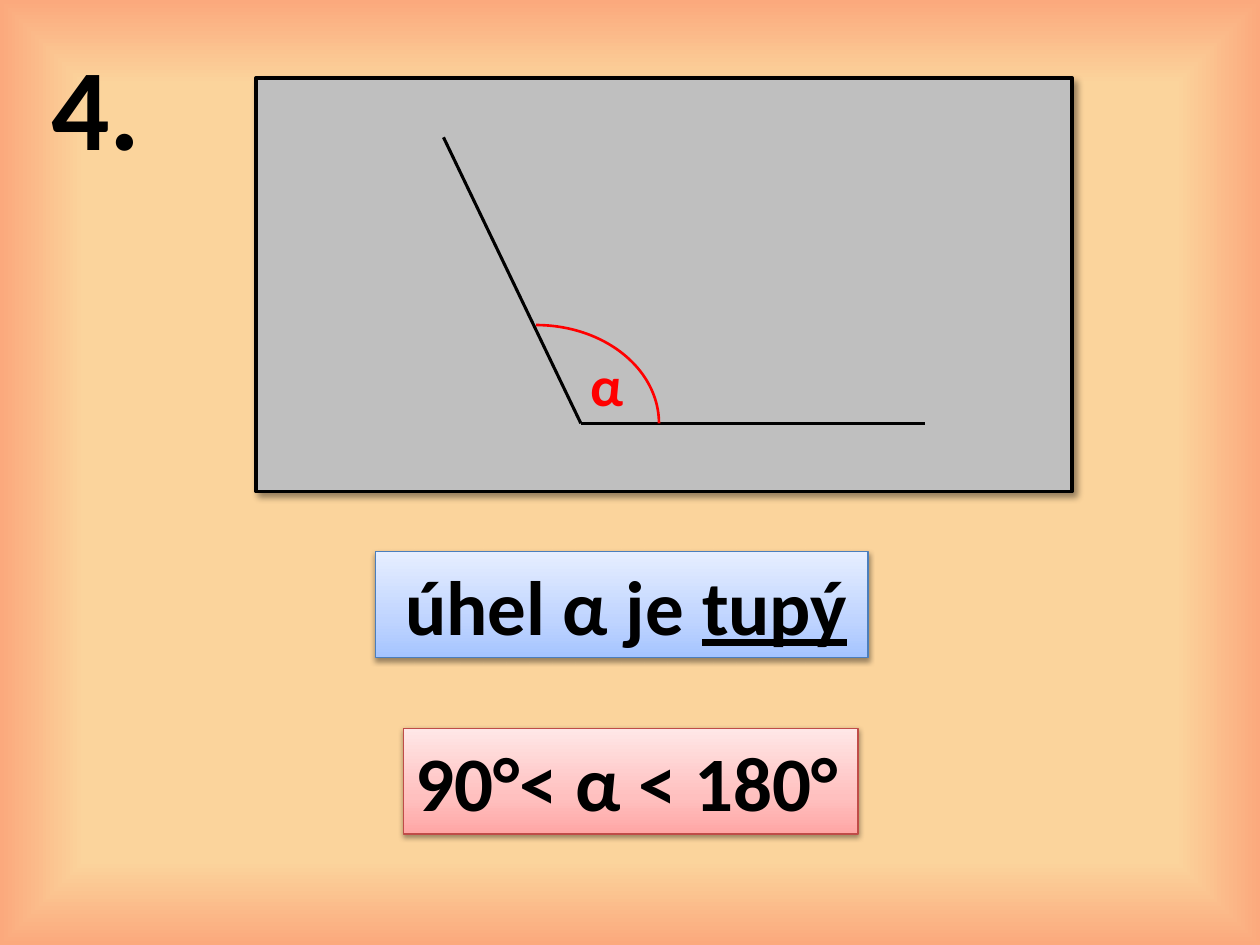
from dataclasses import dataclass

import lxml.etree
import pptx
import pptx.dml.color
import pptx.enum.shapes
import pptx.enum.text
import pptx.oxml
import pptx.oxml.ns
import pptx.util

Inches, Pt = pptx.util.Inches, pptx.util.Pt
qn = pptx.oxml.ns.qn
SHAPE = pptx.enum.shapes.MSO_SHAPE

COLORS = {
    "black": "000000",
    "red": "FF0000",
    "panel": "BFBFBF",
    "blue line": "4B7EBC",
    "red line": "BF4C48",
}
LINEAR = '<a:lin ang="16200000" scaled="1"/>'
FROM_CENTER = '<a:path path="rect"><a:fillToRect l="50000" t="50000" r="50000" b="50000"/></a:path>'


@dataclass
class Stop:
    position: int
    color: str
    alpha: int = 100


@dataclass
class Shadow:
    alpha: int
    blur: float
    distance: float
    angle: int


@dataclass
class Label:
    texts: list[str]
    left: float
    top: float
    width: float
    height: float
    size: int
    color: str = "black"


@dataclass
class Card:
    label: Label
    stops: list[Stop]
    line: str


BACKGROUND = [Stop(82, "FBD49C"), Stop(100, "FBA97D", 45), Stop(100, "FEE7F2")]
PANEL_SHADOW = Shadow(40, 4, 3, 45)
CARD_SHADOW = Shadow(38, 3.1, 1.6, 90)
VERTEX = (4.61, 3.36)
RAY_ENDS = [(3.52, 1.09), (7.34, 3.36)]
LABELS = [
    Label(["4."], 0.31, 0.23, 0.92, 1.21, 66),
    Label(["α"], 4.59, 2.73, 0.49, 0.64, 32, "red"),
]
# The second text of a label is underlined.
CARDS = [
    Card(Label([" úhel α je ", "tupý"], 2.98, 4.38, 3.91, 0.84, 44),
         [Stop(0, "A4C4FF"), Stop(35, "BFD4FF"), Stop(100, "E6EEFF")], "blue line"),
    Card(Label(["90°< α < 180°"], 3.2, 5.78, 3.61, 0.84, 44),
         [Stop(0, "FFA6A5"), Stop(35, "FFC0BF"), Stop(100, "FFE7E7")], "red line"),
]


def rgb(name: str) -> pptx.dml.color.RGBColor:
    return pptx.dml.color.RGBColor.from_string(COLORS[name])


def set_line(shape, color: str, width: float) -> None:
    shape.line.color.rgb = rgb(color)
    shape.line.width = Pt(width)


def set_gradient(fill, element, stops: list[Stop], direction: str) -> None:
    """Give the fill found inside element the listed stops."""
    fill.gradient()
    old = next(element.iter(qn("a:gradFill")))
    stop_xml = "".join(
        f'<a:gs pos="{stop.position * 1000}"><a:srgbClr val="{stop.color}">'
        + (f'<a:alpha val="{stop.alpha * 1000}"/>' if stop.alpha < 100 else "")
        + "</a:srgbClr></a:gs>"
        for stop in stops
    )
    new = pptx.oxml.parse_xml(
        f'<a:gradFill {pptx.oxml.ns.nsdecls("a")} rotWithShape="1">'
        f"<a:gsLst>{stop_xml}</a:gsLst>{direction}</a:gradFill>"
    )
    old.getparent().replace(old, new)


def add_shadow(shape, shadow: Shadow) -> None:
    shape.shadow.inherit = False
    effects = shape.element.spPr.find(qn("a:effectLst"))
    outer = lxml.etree.SubElement(
        effects, qn("a:outerShdw"),
        blurRad=str(Pt(shadow.blur)), dist=str(Pt(shadow.distance)),
        dir=str(shadow.angle * 60000), algn="tl", rotWithShape="0",
    )
    color = lxml.etree.SubElement(outer, qn("a:srgbClr"), val=COLORS["black"])
    lxml.etree.SubElement(color, qn("a:alpha"), val=str(shadow.alpha * 1000))


def add_label(slide, label: Label):
    box = slide.shapes.add_textbox(
        Inches(label.left), Inches(label.top), Inches(label.width), Inches(label.height))
    frame = box.text_frame
    frame.word_wrap = False
    frame.auto_size = pptx.enum.text.MSO_AUTO_SIZE.SHAPE_TO_FIT_TEXT
    for index, text in enumerate(label.texts):
        run = frame.paragraphs[0].add_run()
        run.text = text
        run.font.name = "Calibri"
        run.font.size = Pt(label.size)
        run.font.bold = True
        run.font.color.rgb = rgb(label.color)
        if index == 1:
            run.font.underline = True
    return box


def add_card(slide, card: Card) -> None:
    box = add_label(slide, card.label)
    set_gradient(box.fill, box.element, card.stops, LINEAR)
    set_line(box, card.line, 0.75)
    add_shadow(box, CARD_SHADOW)


def add_ray(slide, end: tuple[float, float]) -> None:
    ray = slide.shapes.add_connector(
        pptx.enum.shapes.MSO_CONNECTOR.STRAIGHT, *map(Inches, end + VERTEX))
    set_line(ray, "black", 1.75)
    lxml.etree.SubElement(ray.element.spPr, qn("a:effectLst"))


def main() -> None:
    presentation = pptx.Presentation()
    presentation.slide_width, presentation.slide_height = Inches(10), Inches(7.5)
    slide = presentation.slides.add_slide(presentation.slide_layouts[6])
    set_gradient(slide.background.fill, slide.element, BACKGROUND, FROM_CENTER)

    panel = slide.shapes.add_shape(
        SHAPE.RECTANGLE, Inches(2.03), Inches(0.62), Inches(6.48), Inches(3.28))
    panel.fill.solid()
    panel.fill.fore_color.rgb = rgb("panel")
    set_line(panel, "black", 2)
    add_shadow(panel, PANEL_SHADOW)

    for end in RAY_ENDS:
        add_ray(slide, end)
    for label in LABELS:
        add_label(slide, label)

    arc = slide.shapes.add_shape(
        SHAPE.ARC, Inches(3.28), Inches(2.58), Inches(1.95), Inches(1.56))
    arc.fill.background()
    set_line(arc, "red", 1.5)
    arc.shadow.inherit = False

    for card in CARDS:
        add_card(slide, card)
    presentation.save("out.pptx")


if __name__ == "__main__":
    main()
